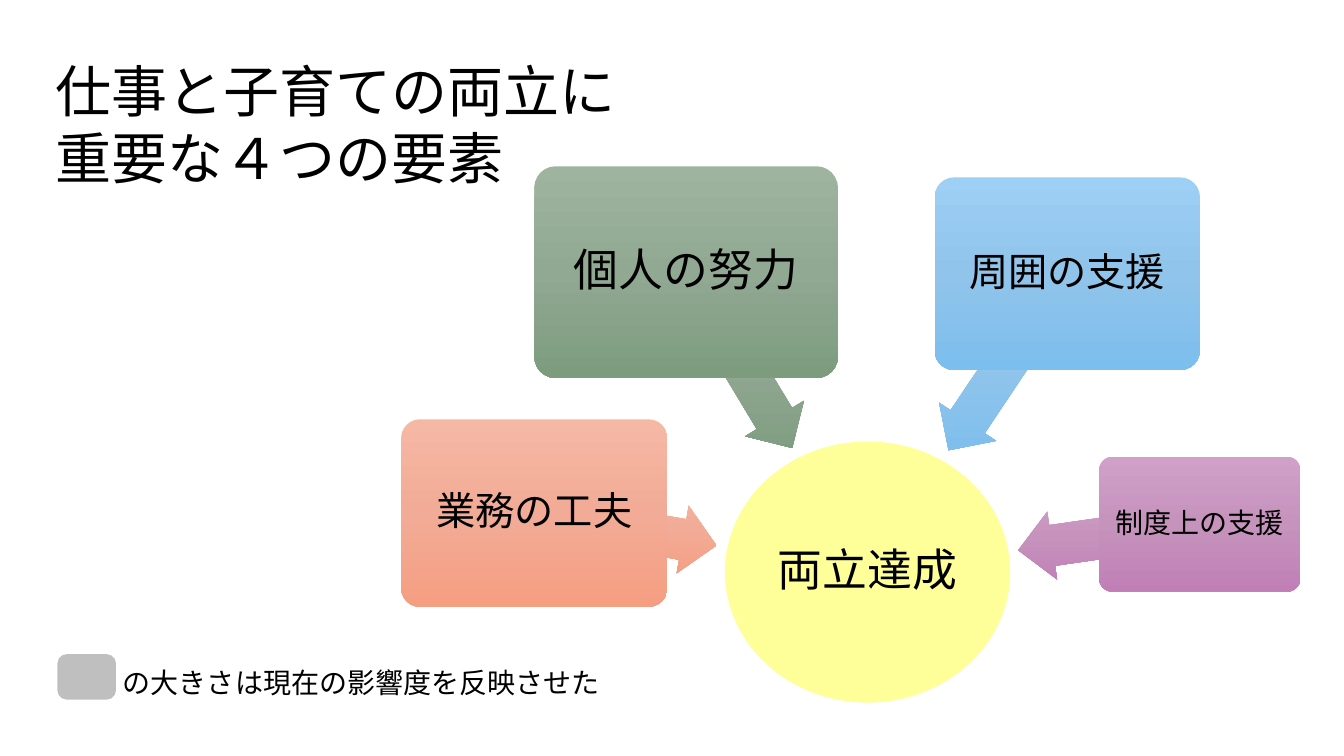
from copy import deepcopy
from lxml import etree
from pptx import Presentation
from pptx.dml.color import RGBColor
from pptx.enum import shapes, text
from pptx.oxml.ns import qn
from pptx.util import Inches, Pt

FONT = "Noto Sans CJK JP"
BLACK = RGBColor(0x00, 0x00, 0x00)
YELLOW = RGBColor(0xFF, 0xFF, 0x99)
GRAY = RGBColor(0xBF, 0xBF, 0xBF)
ORANGES = [RGBColor.from_string(c) for c in ("F5B8A5", "F2AB96", "F59E82")]
GREENS = [RGBColor.from_string(c) for c in ("9EB49F", "91A892", "7D9C7E")]
BLUES = [RGBColor.from_string(c) for c in ("9ECFF5", "90C4EB", "7CBEED")]
PURPLES = [RGBColor.from_string(c) for c in ("D0A0C8", "C693BD", "C17FB6")]


def add_shape(kind, box, colors):
    """Borderless shape with a solid colour or a vertical three-stop gradient."""
    sp = s.shapes.add_shape(kind, *map(Inches, box))
    sp.shadow.inherit = False
    sp.line.fill.background()
    if len(colors) == 1:
        sp.fill.solid()
        sp.fill.fore_color.rgb = colors[0]
        return sp
    sp.fill.gradient()
    sp.fill.gradient_angle = 270
    grad = sp._element.spPr.find(qn("a:gradFill"))
    grad.set("rotWithShape", "0")
    stops = grad.find(qn("a:gsLst"))
    stops.append(deepcopy(stops[0]))
    for stop, position, color in zip(sp.fill.gradient_stops, (0, 0.5, 1), colors):
        stop.position = position
        stop.color.rgb = color
    return sp


def set_text(sp, content, size, align, anchor, wrap=True):
    tf = sp.text_frame
    tf.text = content
    tf.word_wrap = wrap
    tf.auto_size = text.MSO_AUTO_SIZE.NONE
    tf.vertical_anchor = anchor
    for p in tf.paragraphs:
        p.alignment = align
        p.font.name, p.font.size, p.font.color.rgb = FONT, Pt(size), BLACK
        for r in p.runs:
            etree.SubElement(r._r.get_or_add_rPr(), qn("a:ea")).set("typeface", FONT)
    return tf


prs = Presentation()
prs.slide_width, prs.slide_height = Inches(13.33), Inches(7.5)
s = prs.slides.add_slide(prs.slide_layouts[5])
LEFT, CENTER = text.PP_ALIGN.LEFT, text.PP_ALIGN.CENTER
TOP, MIDDLE = text.MSO_ANCHOR.TOP, text.MSO_ANCHOR.MIDDLE
ROUNDED = shapes.MSO_SHAPE.ROUNDED_RECTANGLE

# Title
title = s.shapes.title
title.left, title.top, title.width, title.height = map(Inches, (0.45, 0.51, 5.81, 1.45))
set_text(title, "仕事と子育ての両立に\n重要な４つの要素", 40, LEFT, TOP, wrap=False)

# Goal in the centre
goal = add_shape(shapes.MSO_SHAPE.OVAL, (7.19, 4.38, 2.83, 2.59), [YELLOW])
set_text(goal, "両立達成", 32, CENTER, MIDDLE).paragraphs[0].line_spacing = 0.9

# Four factors, each with an arrow to the goal
factors = [
    ("業務の工夫", 28, (3.98, 4.16, 2.64, 1.86), (5.28, 4.91, 1.84, 0.68), 190.1, ORANGES),
    ("個人の努力", 32, (5.3, 1.65, 3.01, 2.1), (6.31, 3.23, 2.04, 0.68), 238.9, GREENS),
    ("周囲の支援", 28, (9.27, 1.76, 2.63, 1.91), (8.94, 3.25, 2.11, 0.68), 303.8, BLUES),
    ("制度上の支援", 20, (10.9, 4.53, 2, 1.34), (10.09, 4.99, 1.82, 0.68), 351.8, PURPLES),
]
for label, size, box, arrow_box, angle, colors in factors:
    arrow = add_shape(shapes.MSO_SHAPE.LEFT_ARROW, arrow_box, colors)
    arrow.adjustments[0] = 0.6
    arrow.rotation = angle
    card = add_shape(ROUNDED, box, colors)
    card.adjustments[0] = 0.1
    tf = set_text(card, label, size, CENTER, MIDDLE)
    tf.margin_left = tf.margin_right = Inches(0.06)
    tf.paragraphs[0].line_spacing = 0.9

# Size legend
legend = s.shapes.add_textbox(*map(Inches, (1.12, 6.55, 4.97, 0.44)))
set_text(legend, "の大きさは現在の影響度を反映させた", 20, LEFT, TOP, wrap=False)
swatch = add_shape(ROUNDED, (0.57, 6.49, 0.58, 0.45), [GRAY])
swatch.adjustments[0] = 0.2

prs.save("out.pptx")
